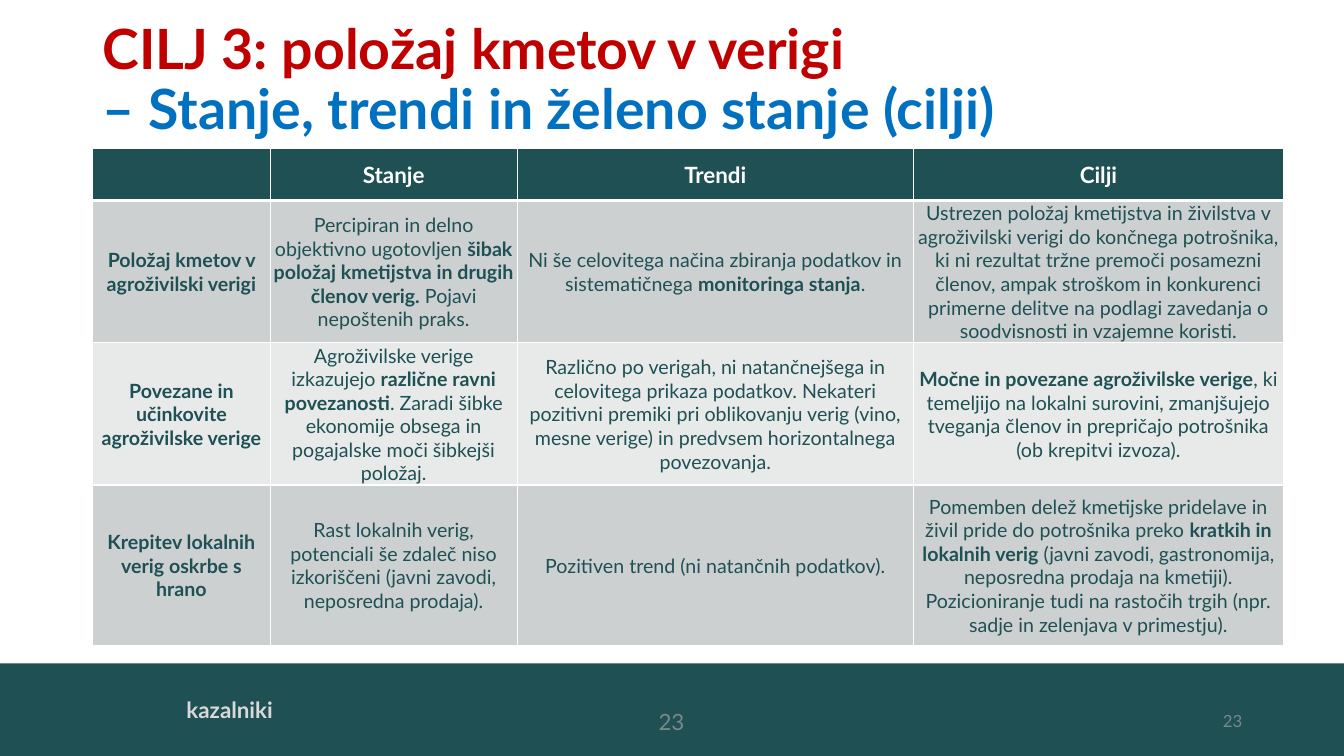
from lxml.etree import SubElement
from pptx import Presentation
from pptx.dml.color import RGBColor as Color
from pptx.enum.shapes import MSO_SHAPE as Shape
from pptx.enum.text import MSO_ANCHOR as Anchor, PP_ALIGN as Align
from pptx.oxml.ns import qn
from pptx.util import Inches, Pt

THEME = {
    "font": "Lato",
    "teal": "1E5054", "white": "FFFFFF", "red": "C00000", "blue": "0070C0",
    "muted": "7B888A", "light": "D9D9D9", "bands": ["CDD0D1", "E8E9E9"],
    "title": 39.6, "label": 16, "body": 14, "number": 12,
}
COLUMNS = [1.76, 2.45, 3.93, 3.67]
ROWS = [0.52, 1.3, 1.34, 1.59]
LEFT = 0.92
CELLS = [
    ["", "*Stanje*", "*Trendi*", "*Cilji*"],
    ["*Položaj kmetov v agroživilski verigi*",
     "Percipiran in delno objektivno ugotovljen *šibak položaj kmetijstva in drugih členov verig.* Pojavi nepoštenih praks.",
     "Ni še celovitega načina zbiranja podatkov in sistematičnega *monitoringa stanja*.",
     "Ustrezen položaj kmetijstva in živilstva v agroživilski verigi do končnega potrošnika, ki ni rezultat tržne premoči posamezni členov, ampak stroškom in konkurenci primerne delitve na podlagi zavedanja o soodvisnosti in vzajemne koristi."],
    ["*Povezane in učinkovite agroživilske verige*",
     "Agroživilske verige izkazujejo *različne ravni povezanosti*. Zaradi šibke ekonomije obsega in pogajalske moči šibkejši položaj.",
     "Različno po verigah, ni natančnejšega in celovitega prikaza podatkov. Nekateri pozitivni premiki pri oblikovanju verig (vino, mesne verige) in predvsem horizontalnega povezovanja.",
     "*Močne in povezane agroživilske verige*, ki temeljijo na lokalni surovini, zmanjšujejo tveganja členov in prepričajo potrošnika (ob krepitvi izvoza)."],
    ["*Krepitev lokalnih verig oskrbe s hrano*",
     "Rast lokalnih verig, potenciali še zdaleč niso izkoriščeni (javni zavodi, neposredna prodaja).",
     "Pozitiven trend (ni natančnih podatkov).",
     "Pomemben delež kmetijske pridelave in živil pride do potrošnika preko *kratkih in lokalnih verig* (javni zavodi, gastronomija, neposredna prodaja na kmetiji). Pozicioniranje tudi na rastočih trgih (npr. sadje in zelenjava v primestju)."],
]


def style(span, size, color, bold):
    span.font.name = THEME["font"]
    span.font.size = Pt(size)
    span.font.color.rgb = Color.from_string(color)
    span.font.bold = bold


def add_text(page, place, text, size, colors, bold, align, anchor):
    box = page.shapes.add_textbox(*[Inches(length) for length in place])
    frame = box.text_frame
    frame.word_wrap = True
    frame.vertical_anchor = anchor
    frame.text = text
    para = frame.paragraphs[0]
    para.alignment = align
    for span, color in zip(para.runs, colors):
        style(span, size, color, bold)
    return frame


deck = Presentation()
deck.slide_width, deck.slide_height = Inches(13.33), Inches(7.5)
page = deck.slides.add_slide(deck.slide_layouts[6])

footer_top = Inches(6.58)
footer = page.shapes.add_shape(
    Shape.RECTANGLE, 0, footer_top, deck.slide_width, deck.slide_height - footer_top)
footer.shadow.inherit = False
footer.fill.solid()
footer.fill.fore_color.rgb = Color.from_string(THEME["teal"])
footer.line.fill.background()

label = add_text(page, (1.6, 6.86, 10.07, 0.37), "kazalniki", THEME["label"],
                 [THEME["light"]], True, Align.LEFT, Anchor.TOP)
label.margin_left = Inches(0.25)

title = add_text(page, (LEFT, 0.4, 9.72, 0.81),
                 "CILJ 3: položaj kmetov v verigi\v– Stanje, trendi in želeno stanje (cilji)",
                 THEME["title"], [THEME["red"], THEME["blue"]], True, Align.LEFT, Anchor.MIDDLE)
title.paragraphs[0].line_spacing = 0.9

for left, top, size, align in [(5.16, 6.96, THEME["label"], Align.CENTER),
                               (9.42, 6.95, THEME["number"], Align.RIGHT)]:
    add_text(page, (left, top, 3, 0.4), "23", size, [THEME["muted"]], False, align, Anchor.MIDDLE)

table = page.shapes.add_table(
    len(ROWS), len(COLUMNS), Inches(LEFT), Inches(1.47),
    Inches(sum(COLUMNS)), Inches(sum(ROWS))).table
for column, width in zip(table.columns, COLUMNS):
    column.width = Inches(width)

for row_index, (height, texts) in enumerate(zip(ROWS, CELLS)):
    table.rows[row_index].height = Inches(height)
    header = row_index == 0
    fill = THEME["teal"] if header else THEME["bands"][(row_index - 1) % 2]
    size = THEME["label"] if header else THEME["body"]
    color = THEME["white"] if header else THEME["teal"]
    thick_side = {0: "lnB", 1: "lnT"}.get(row_index)
    for column_index, text in enumerate(texts):
        cell = table.cell(row_index, column_index)
        cell.vertical_anchor = Anchor.MIDDLE
        cell.margin_left = cell.margin_right = cell.margin_top = Inches(0.01)
        cell.margin_bottom = 0
        properties = cell._tc.get_or_add_tcPr()
        for side in ("lnL", "lnR", "lnT", "lnB"):
            width = Pt(3 if side == thick_side else 1)
            border = SubElement(properties, qn("a:" + side), w=str(width))
            solid = SubElement(border, qn("a:solidFill"))
            SubElement(solid, qn("a:srgbClr"), val=THEME["white"])
        cell.fill.solid()
        cell.fill.fore_color.rgb = Color.from_string(fill)
        para = cell.text_frame.paragraphs[0]
        para.alignment = Align.CENTER
        for part_index, part in enumerate(text.split("*")):
            if part:
                span = para.add_run()
                span.text = part
                style(span, size, color, part_index % 2 == 1)

deck.save("out.pptx")
